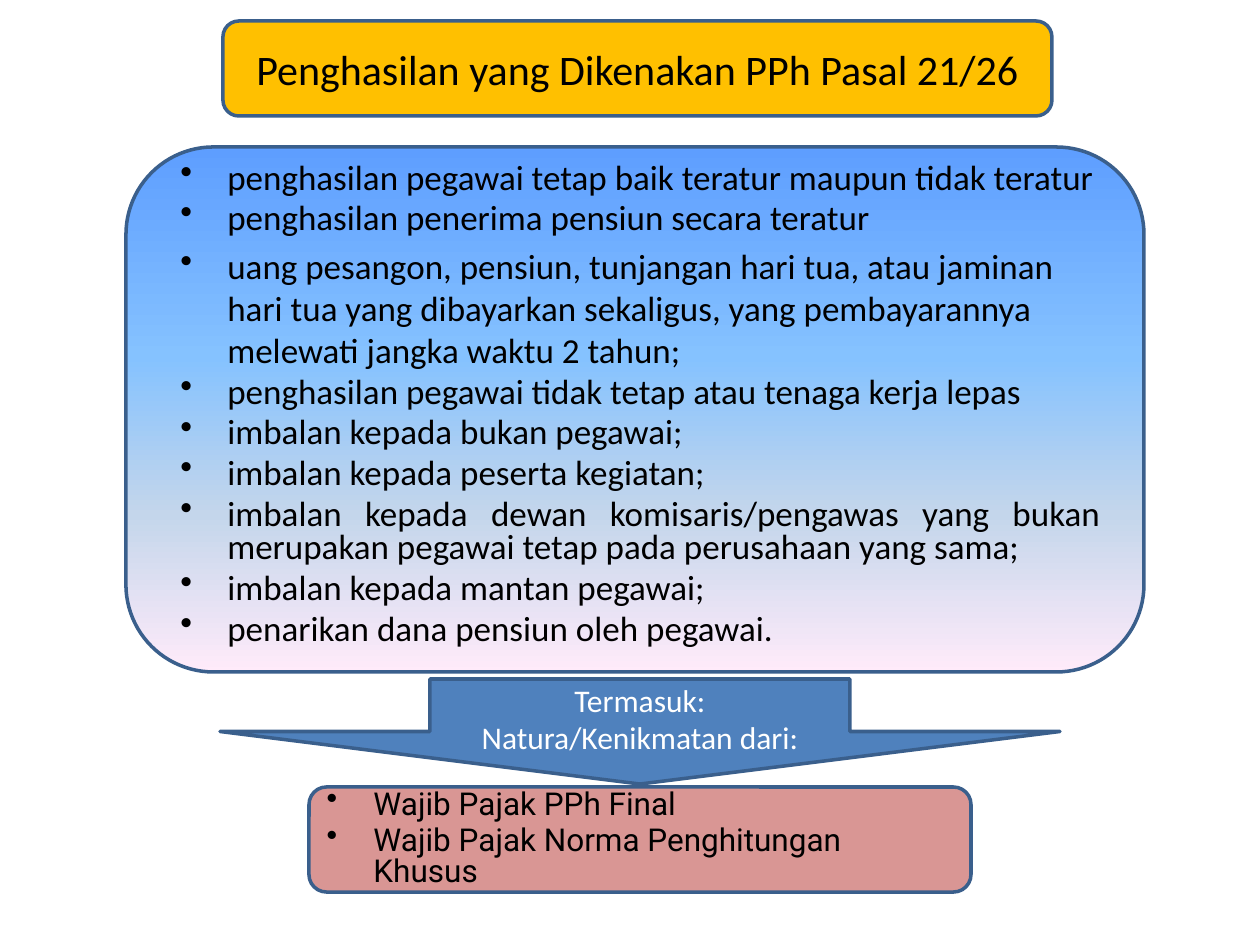
from lxml.etree import SubElement
from pptx import Presentation
from pptx.dml.color import RGBColor
from pptx.enum.shapes import MSO_SHAPE
from pptx.enum.text import MSO_ANCHOR, PP_ALIGN
from pptx.oxml.ns import qn
from pptx.util import Emu, Pt

BLACK = RGBColor(0x00, 0x00, 0x00)
WHITE = RGBColor(0xFF, 0xFF, 0xFF)
GOLD = RGBColor(0xFF, 0xC0, 0x00)
BLUE = RGBColor(0x4F, 0x81, 0xBD)
ROSE = RGBColor(0xD9, 0x96, 0x94)
EDGE = RGBColor(0x3A, 0x5F, 0x8C)
FADE = [
    (0, RGBColor(0x5E, 0x9E, 0xFF)),
    (40, RGBColor(0x85, 0xC2, 0xFF)),
    (70, RGBColor(0xC4, 0xD6, 0xEB)),
    (100, RGBColor(0xFF, 0xEB, 0xFA)),
]

TITLE = "Penghasilan yang Dikenakan PPh Pasal 21/26"
INCOME = [
    "penghasilan pegawai tetap baik teratur maupun tidak teratur",
    "penghasilan penerima pensiun secara teratur",
    "uang pesangon, pensiun, tunjangan hari tua, atau jaminan hari tua "
    "yang dibayarkan sekaligus, yang pembayarannya melewati jangka waktu "
    "2 tahun;",
    "penghasilan pegawai tidak tetap atau tenaga kerja lepas",
    "imbalan kepada bukan pegawai;",
    "imbalan kepada peserta kegiatan;",
    "imbalan kepada dewan komisaris/pengawas yang bukan merupakan pegawai "
    "tetap pada perusahaan yang sama;",
    "imbalan kepada mantan pegawai;",
    "penarikan dana pensiun oleh pegawai.",
]
LOOSE = 2  # the one income item set left with full line spacing
BENEFIT = ["Termasuk:", "Natura/Kenikmatan dari:"]
PAYER = ["Wajib Pajak PPh Final", "Wajib Pajak Norma Penghitungan Khusus"]


def px(n):
    return Emu(round(n * 914400 / 126))


def apply(item, form):
    for name, value in form.items():
        setattr(item, name, value)


class Deck:
    edge = {"width": Pt(2)}
    hang = px(47)
    tight = {"line_spacing": 0.8}

    def __init__(self, wide, high):
        self.prs = Presentation()
        apply(self.prs, {"slide_width": px(wide), "slide_height": px(high)})
        self.slide = self.prs.slides.add_slide(self.prs.slide_layouts[6])

    def shape(self, kind, box, fill):
        item = self.slide.shapes.add_shape(kind, *map(px, box))
        item.shadow.inherit = False
        if isinstance(fill, list):
            self.fade(item, fill)
        else:
            item.fill.solid()
            item.fill.fore_color.rgb = fill
        item.line.color.rgb = EDGE
        apply(item.line, self.edge)
        apply(item.text_frame, {"word_wrap": True,
                                "vertical_anchor": MSO_ANCHOR.MIDDLE})
        return item

    def fade(self, item, stops):
        item.fill.gradient()
        grad = item.fill._xPr.find(qn("a:gradFill"))
        grad.find(qn("a:lin")).set("ang", "5400000")
        group = grad.find(qn("a:gsLst"))
        for old in list(group):
            group.remove(old)
        for pos, color in stops:
            stop = SubElement(group, qn("a:gs"), pos=str(pos * 1000))
            SubElement(stop, qn("a:srgbClr"), val=str(color))

    def box(self, box):
        item = self.slide.shapes.add_textbox(*map(px, box))
        item.text_frame.word_wrap = True
        return item

    def text(self, item, lines, size, color=BLACK, face="Calibri",
             form=None):
        frame = item.text_frame
        for i, line in enumerate(lines):
            para = frame.paragraphs[0] if i == 0 else frame.add_paragraph()
            apply(para, form or {"alignment": PP_ALIGN.CENTER})
            run = para.add_run()
            run.text = line
            apply(run.font, {"size": Pt(size), "name": face})
            run.font.color.rgb = color

    def bullets(self, item, lines, size, face="Calibri",
                align=PP_ALIGN.LEFT):
        self.text(item, lines, size, face=face,
                  form={"alignment": align, **self.tight})
        for i, para in enumerate(item.text_frame.paragraphs):
            if i:
                para.space_before = Pt(size * 0.2)
            props = para._p.get_or_add_pPr()
            props.set("marL", str(self.hang))
            props.set("indent", str(-self.hang))
            SubElement(props, qn("a:buChar"), char="•")


def main():
    deck = Deck(1260, 945)
    round_box = MSO_SHAPE.ROUNDED_RECTANGLE

    # Title
    title = deck.shape(round_box, (223, 21, 829, 95), GOLD)
    deck.text(title, [TITLE], 24)

    # Income list on its faded panel
    deck.shape(round_box, (126, 147, 1018, 525), FADE)
    body = deck.box((168, 157, 945, 502))
    deck.bullets(body, INCOME, 20, align=PP_ALIGN.JUSTIFY)
    apply(body.text_frame.paragraphs[LOOSE],
          {"alignment": PP_ALIGN.LEFT, "line_spacing": 1.0})

    # Payers of benefits in kind
    payer = deck.shape(round_box, (309, 787, 662, 105), ROSE)
    deck.bullets(payer, PAYER, 18, face="Roboto")

    # Arrow from the list to the payers
    arrow = deck.shape(MSO_SHAPE.DOWN_ARROW, (220, 679, 840, 105), BLUE)
    deck.text(arrow, BENEFIT, 18, WHITE)

    deck.prs.save("out.pptx")


if __name__ == "__main__":
    main()
